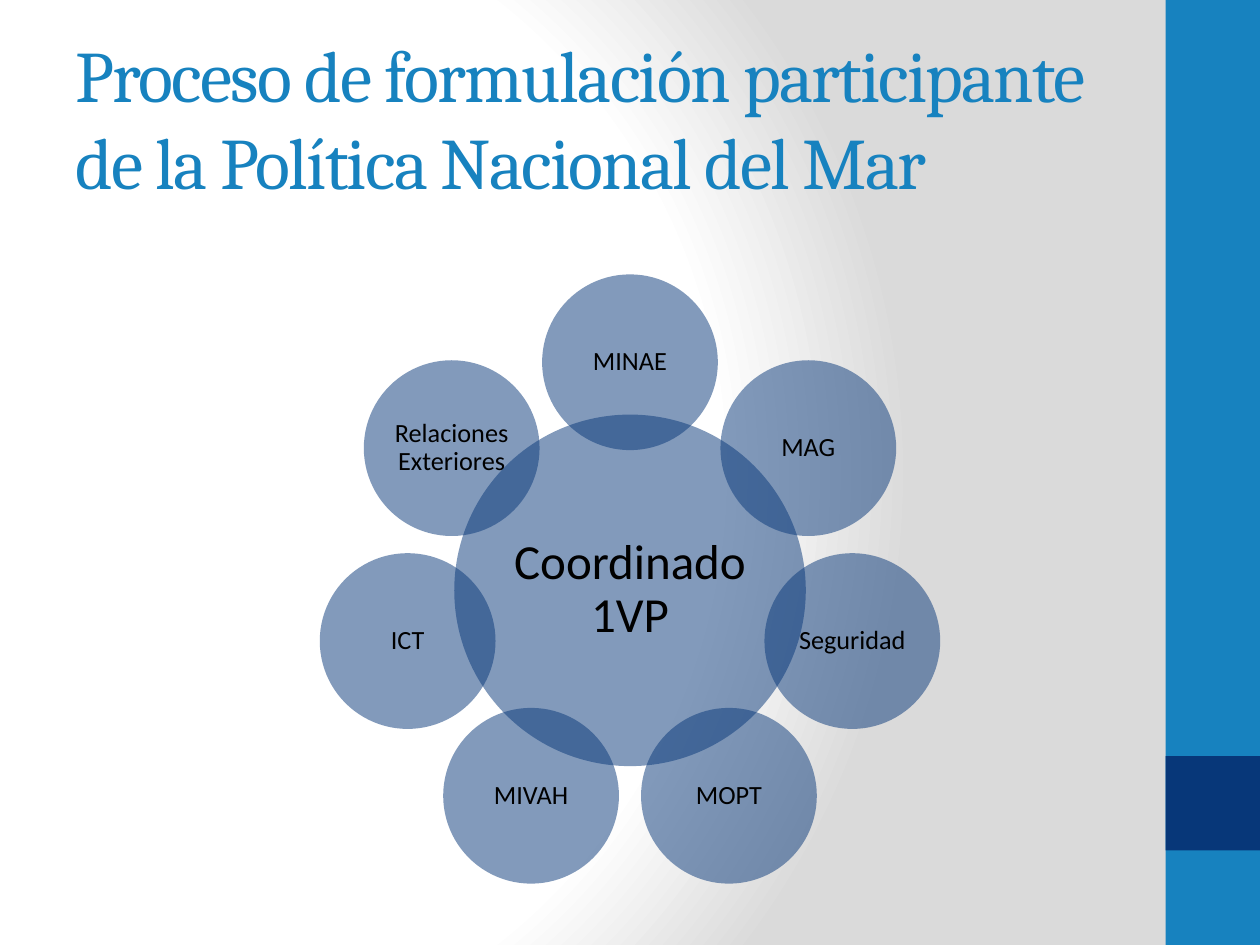
import math

from lxml import etree
from pptx import Presentation
from pptx import util as u
from pptx.dml.color import RGBColor
from pptx.enum import shapes, text
from pptx.oxml import parse_xml
from pptx.oxml.ns import nsdecls, qn

W, H = 10, 7.5
BLUE, NAVY, BLACK = "1782BF", "073779", "000000"
HUB_X, HUB_Y, HUB_SIZE = W / 2, 4.685, 2.79
ORBIT = 1.81
MEMBERS = ["MINAE", "MAG", "Seguridad", "MOPT", "MIVAH", "ICT",
           "Relaciones Exteriores"]


def rgb(value):
    return RGBColor.from_string(value)


def set_background(s):
    """Fill the slide with a radial gradient from white to grey."""
    stops = "".join(
        f'<a:gs pos="{pos * 1000}"><a:srgbClr val="{color}"/></a:gs>'
        for pos, color in [(0, "FFFFFF"), (75, "FFFFFF"), (100, "DADADA")])
    s._element.cSld.insert(0, parse_xml(
        f'<p:bg {nsdecls("p", "a")}><p:bgPr><a:gradFill rotWithShape="1">'
        f'<a:gsLst>{stops}</a:gsLst><a:path path="circle">'
        '<a:fillToRect l="20000" t="50000" r="100000" b="50000"/></a:path>'
        '</a:gradFill><a:effectLst/></p:bgPr></p:bg>'))


def add_shape(parent, kind, x, y, w, h, color):
    sp = parent.add_shape(kind, *map(u.Inches, (x, y, w, h)))
    sp.shadow.inherit = False
    sp.fill.solid()
    sp.fill.fore_color.rgb = rgb(color)
    sp.line.fill.background()
    return sp


def set_font(r, name, size, color):
    r.font.name = name
    r.font.size = u.Pt(size)
    r.font.color.rgb = rgb(color)


def set_title(s, wording):
    sp = s.shapes.title
    sp.left, sp.top, sp.width, sp.height = map(u.Inches, (0.5, 0.3, 8.33, 1.25))
    tf = sp.text_frame
    tf.text = wording
    tf.word_wrap = True
    tf.auto_size = text.MSO_AUTO_SIZE.NONE
    tf.vertical_anchor = text.MSO_ANCHOR.MIDDLE
    p = tf.paragraphs[0]
    p.alignment = text.PP_ALIGN.LEFT
    r = p.runs[0]
    set_font(r, "Cambria", 41.4, BLUE)
    r.font._element.set("spc", "-100")


def add_circle(group, wording, x, y, diameter, size, inset):
    """Add a half-transparent labelled circle centred on x, y."""
    sp = add_shape(group.shapes, shapes.MSO_SHAPE.OVAL, x - diameter / 2,
                   y - diameter / 2, diameter, diameter, NAVY)
    color = sp._element.spPr.find(qn("a:solidFill"))[0]
    etree.SubElement(color, qn("a:alpha"), val="50000")
    tf = sp.text_frame
    tf.text = wording
    tf.word_wrap = True
    tf.vertical_anchor = text.MSO_ANCHOR.MIDDLE
    tf.margin_left = tf.margin_right = u.Inches(inset)
    tf.margin_top = tf.margin_bottom = u.Inches(inset)
    p = tf.paragraphs[0]
    p.alignment = text.PP_ALIGN.CENTER
    p.line_spacing = 0.9
    set_font(p.runs[0], "Calibri", size, BLACK)


def add_radial_diagram(s, hub, members):
    group = s.shapes.add_group_shape()
    add_circle(group, hub, HUB_X, HUB_Y, HUB_SIZE, 28, 0.04)
    for i, member in enumerate(members):
        angle = math.tau * i / len(members)
        add_circle(group, member, HUB_X + ORBIT * math.sin(angle),
                   HUB_Y - ORBIT * math.cos(angle), HUB_SIZE / 2, 15, 0.02)


def main():
    prs = Presentation()
    prs.slide_width, prs.slide_height = u.Inches(W), u.Inches(H)
    s = prs.slides.add_slide(prs.slide_layouts[5])
    set_background(s)
    band = 0.75
    for y, h, color in [(0, H, BLUE), (6, band, NAVY)]:
        add_shape(s.shapes, shapes.MSO_SHAPE.RECTANGLE, W - band, y, band, h, color)
    set_title(s, "Proceso de formulación participante de la Política Nacional del Mar")
    add_radial_diagram(s, "Coordinado 1VP", MEMBERS)
    prs.save("out.pptx")


if __name__ == "__main__":
    main()
